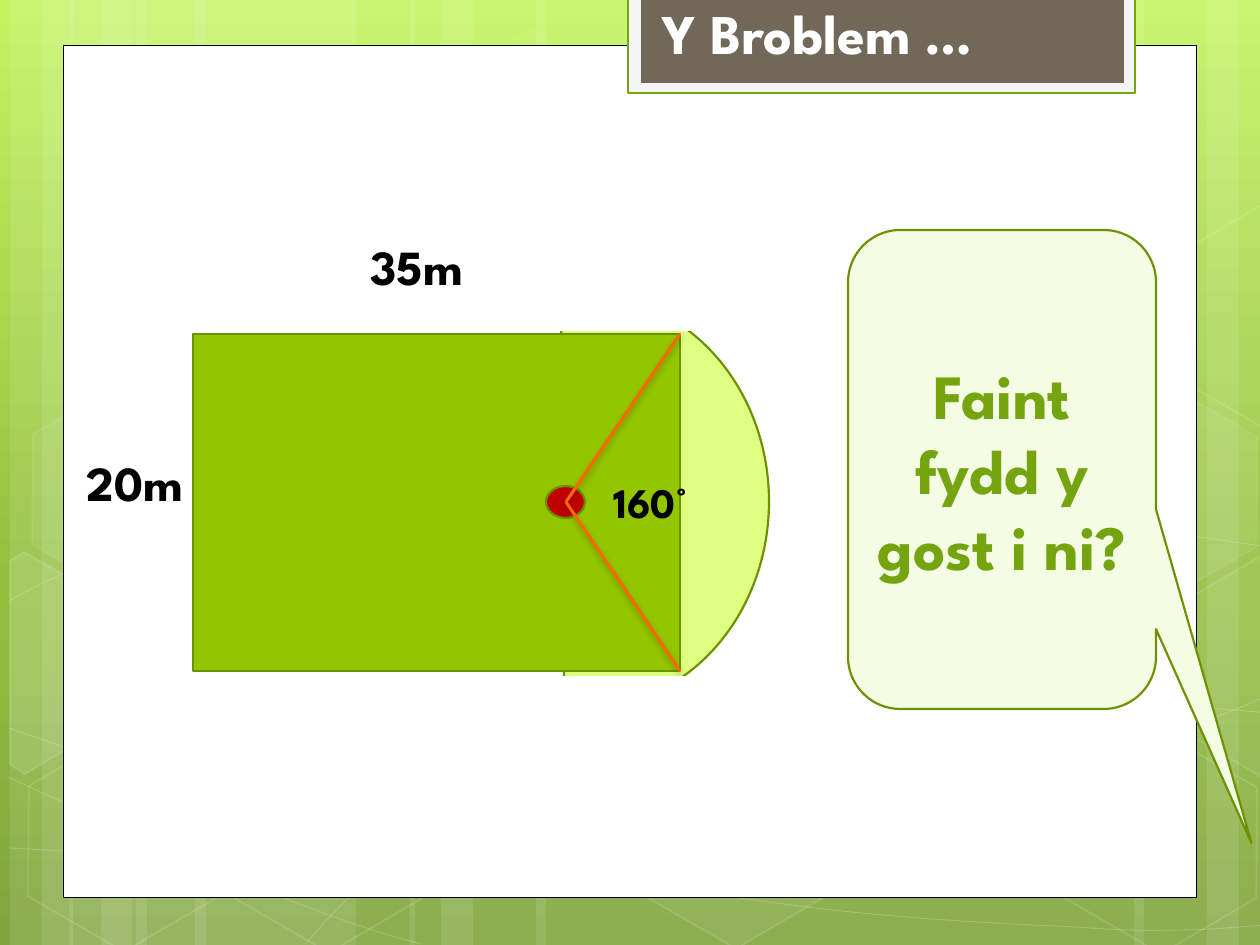
from copy import deepcopy
from dataclasses import dataclass

from lxml.etree import SubElement
from pptx import Presentation
from pptx.dml.color import RGBColor
from pptx.enum.shapes import MSO_CONNECTOR, MSO_SHAPE
from pptx.enum.text import MSO_ANCHOR, MSO_AUTO_SIZE, PP_ALIGN
from pptx.oxml.ns import qn
from pptx.util import Emu, Pt


@dataclass(frozen=True)
class Theme:
    font: str = "League Spartan"
    white: str = "FFFFFF"
    black: str = "000000"
    backdrop: tuple = ((0, "C3F35F"), (0.62, "93BF3F"), (1, "81A53E"))
    title_frame: str = "F5F5F5"
    title_panel: str = "71685A"
    accent: str = "74A510"
    outline: str = "6D9200"
    lawn: str = "94C600"
    sector: str = "DFFF82"
    centre: str = "C00000"
    radius: str = "FF6700"
    bubble: str = "F4FCE4"
    title_size: int = 32
    length_size: int = 28
    angle_size: int = 24
    question_size: int = 36
    outline_width: float = 1.25


THEME = Theme()
SLIDE_WIDTH, SLIDE_HEIGHT = 1260, 945

STRIPS = [(136, 220), (10, 63), (42, 105), (195, 220), (69, 63), (101, 105),
          (924, 220), (1207, 63), (1134, 105), (536, 388), (410, 63), (441, 105)]

CURVES = [
    [(9, 848), (77, 852), (145, 856), (239, 854), (334, 853), (451, 851), (577, 838),
     (703, 825), (882, 801), (998, 777), (1113, 753), (1231, 716), (1269, 694)],
    [(9, 601), (45, 581), (82, 562), (152, 543), (224, 524), (326, 496), (437, 488),
     (549, 479), (685, 478), (824, 488), (963, 498), (1193, 537), (1269, 547)],
    [(8, 777), (160, 847), (311, 916), (421, 944)],
    [(9, 728), (48, 742), (88, 756), (161, 776), (234, 795), (344, 827), (450, 848),
     (554, 869), (687, 892), (791, 905), (896, 919), (1008, 924), (1075, 927),
     (1140, 932), (1158, 930), (1191, 930), (1223, 929), (1246, 926), (1269, 925)],
    [(305, 944), (328, 919), (350, 893), (381, 871), (411, 848), (454, 823), (489, 805),
     (524, 788), (546, 780), (592, 767), (637, 755), (722, 737), (766, 728),
     (811, 719), (818, 719), (857, 717), (896, 713), (958, 709), (1000, 708),
     (1044, 707), (1116, 708), (1116, 708), (1116, 708), (1201, 708), (1201, 708),
     (1223, 709), (1245, 711), (1256, 712), (1268, 713), (1264, 712), (1268, 713)],
]

HEXAGONS = [(421, 45, 4, 8), (626, 742, 6, 12), (14, 745, None, 12), (18, 393, 7, 8),
            (219, 746, None, 12), (949, 571, 10, 12), (1051, 747, None, 12),
            (1051, 396, 7, 8)]

CUT_HEXAGONS = [
    ([(10, 561), (24, 552), (121, 607), (120, 718), (25, 774), (10, 765)], 10),
    ([(1167, 611), (1261, 556), (1271, 562), (1271, 772), (1262, 777), (1167, 722)], 4),
    ([(1167, 261), (1261, 205), (1273, 212), (1271, 422), (1262, 427), (1167, 372)], None),
]


def px(length):
    return Emu(round(length * 914400 / 126))


def rgb(colour):
    return RGBColor.from_string(colour)


def set_alpha(solid_fill, percent):
    SubElement(solid_fill[0], qn("a:alpha"), val=str(percent * 1000))


def paint(shape, fill=None, line=None, width=THEME.outline_width,
          fill_alpha=None, line_alpha=None):
    shape.shadow.inherit = False
    properties = shape.element.spPr
    if fill:
        shape.fill.solid()
        shape.fill.fore_color.rgb = rgb(fill)
        if fill_alpha:
            set_alpha(properties.find(qn("a:solidFill")), fill_alpha)
    else:
        shape.fill.background()
    if line:
        shape.line.color.rgb = rgb(line)
        shape.line.width = Pt(width)
        if line_alpha:
            set_alpha(properties.find(qn("a:ln")).find(qn("a:solidFill")), line_alpha)
    else:
        shape.line.fill.background()


def add_figure(slide, kind, box, adjustments=(), rotation=0, **look):
    figure = slide.shapes.add_shape(kind, *map(px, box))
    for index, value in enumerate(adjustments):
        figure.adjustments[index] = value
    figure.rotation = rotation
    paint(figure, **look)
    return figure


def add_outline(slide, points, closed, **look):
    start, *rest = [(px(x), px(y)) for x, y in points]
    builder = slide.shapes.build_freeform(*start)
    builder.add_line_segments(rest, close=closed)
    outline = builder.convert_to_shape()
    paint(outline, line=THEME.white, **look)
    return outline


def add_curve(slide, controls):
    curve = add_outline(slide, controls, False, width=0.5, line_alpha=20)
    track = next(curve.element.iter(qn("a:path")))
    steps = track.findall(qn("a:lnTo"))
    for first in range(0, len(steps), 3):
        bezier = SubElement(track, qn("a:cubicBezTo"))
        for step in steps[first:first + 3]:
            bezier.append(step[0])
            track.remove(step)


def write(frame, text, size, colour, align=PP_ALIGN.LEFT, anchor=MSO_ANCHOR.TOP):
    frame.word_wrap = True
    frame.auto_size = MSO_AUTO_SIZE.NONE
    frame.vertical_anchor = anchor
    paragraph = frame.paragraphs[0]
    paragraph.text = text
    paragraph.alignment = align
    font = paragraph.font
    font.name, font.size, font.bold = THEME.font, Pt(size), True
    font.color.rgb = rgb(colour)


def add_label(slide, text, box, size):
    label = slide.shapes.add_textbox(*map(px, box))
    write(label.text_frame, text, size, THEME.black)


def add_radius(slide, start, end):
    radius = slide.shapes.add_connector(MSO_CONNECTOR.STRAIGHT, *map(px, start + end))
    radius.line.color.rgb = rgb(THEME.radius)
    radius.line.width = Pt(1.75)
    effects = SubElement(radius.element.spPr, qn("a:effectLst"))
    shadow = SubElement(effects, qn("a:outerShdw"), blurRad=str(Pt(4)), dist=str(Pt(2)),
                        dir="5400000", rotWithShape="0")
    set_alpha([SubElement(shadow, qn("a:srgbClr"), val=THEME.black)], 28)


def set_backdrop(layout):
    fill = layout.background.fill
    fill.gradient()
    fill.gradient_angle = 270
    stops = next(layout.element.iter(qn("a:gsLst")))
    stops.insert(1, deepcopy(stops[0]))
    for stop, (position, colour) in zip(fill.gradient_stops, THEME.backdrop):
        stop.position = position
        stop.color.rgb = rgb(colour)


def add_decoration(slide):
    for left, width in STRIPS:
        add_figure(slide, MSO_SHAPE.RECTANGLE, (left, 0, width, SLIDE_HEIGHT),
                   fill=THEME.white, fill_alpha=10)
    for controls in CURVES:
        add_curve(slide, controls)
    for left, top, fill_alpha, line_alpha in HEXAGONS:
        add_figure(slide, MSO_SHAPE.HEXAGON, (left, top, 220, 192), (0.285,), 30,
                   fill=fill_alpha and THEME.white, fill_alpha=fill_alpha,
                   line=THEME.white, width=1, line_alpha=line_alpha)
    for corners, fill_alpha in CUT_HEXAGONS:
        add_outline(slide, corners, True, fill=fill_alpha and THEME.white,
                    fill_alpha=fill_alpha, width=1, line_alpha=12)
    add_figure(slide, MSO_SHAPE.RECTANGLE, (63, 45, 1134, 853),
               fill=THEME.white, line=THEME.black, width=0.5)
    add_figure(slide, MSO_SHAPE.RECTANGLE, (628, -3, 507, 96),
               fill=THEME.title_frame, line=THEME.accent)
    add_figure(slide, MSO_SHAPE.RECTANGLE, (641, -3, 483, 86), fill=THEME.title_panel)


def move_to_layout(slide, layout):
    for placeholder in list(layout.placeholders)[1:]:
        layout.shapes.element.remove(placeholder.element)
    for decoration in list(slide.shapes):
        if not decoration.is_placeholder:
            layout.shapes.element.append(decoration.element)


def add_title(slide):
    title = slide.shapes.title
    title.left, title.top, title.width, title.height = map(px, (650, 2, 466, 70))
    write(title.text_frame, "Y Broblem …", THEME.title_size, THEME.white,
          anchor=MSO_ANCHOR.BOTTOM)
    slide.shapes.element.append(title.element)


def add_garden(slide):
    add_figure(slide, MSO_SHAPE.CHORD, (402, 295, 367, 413), (49.91, 165.54), 180,
               fill=THEME.sector, line=THEME.outline)
    add_figure(slide, MSO_SHAPE.RECTANGLE, (193, 334, 487, 337),
               fill=THEME.lawn, line=THEME.outline)
    add_figure(slide, MSO_SHAPE.OVAL, (546, 486, 39, 32),
               fill=THEME.centre, line=THEME.outline)
    for corner in ((680, 334), (680, 671)):
        add_radius(slide, (566, 502), corner)
    for left, top in ((449, 231), (471, 677)):
        add_figure(slide, MSO_SHAPE.RECTANGLE, (left, top, 307, 99),
                   fill=THEME.white, line=THEME.white)
    add_label(slide, "20m", (74, 446, 156, 72), THEME.length_size)
    add_label(slide, "35m", (358, 230, 156, 72), THEME.length_size)
    add_label(slide, "160°", (601, 470, 156, 63), THEME.angle_size)


def add_question(slide):
    question = add_figure(slide, MSO_SHAPE.ROUNDED_RECTANGULAR_CALLOUT,
                          (848, 230, 308, 479), (0.81, 0.78, 0.17),
                          fill=THEME.bubble, line=THEME.outline)
    write(question.text_frame, "Faint fydd y gost i ni? ", THEME.question_size,
          THEME.accent, PP_ALIGN.CENTER, MSO_ANCHOR.MIDDLE)


def main():
    deck = Presentation()
    deck.slide_width, deck.slide_height = px(SLIDE_WIDTH), px(SLIDE_HEIGHT)
    layout = deck.slide_layouts[5]
    slide = deck.slides.add_slide(layout)
    set_backdrop(layout)
    add_decoration(slide)
    move_to_layout(slide, layout)
    add_garden(slide)
    add_title(slide)
    add_question(slide)
    deck.save("out.pptx")


if __name__ == "__main__":
    main()
